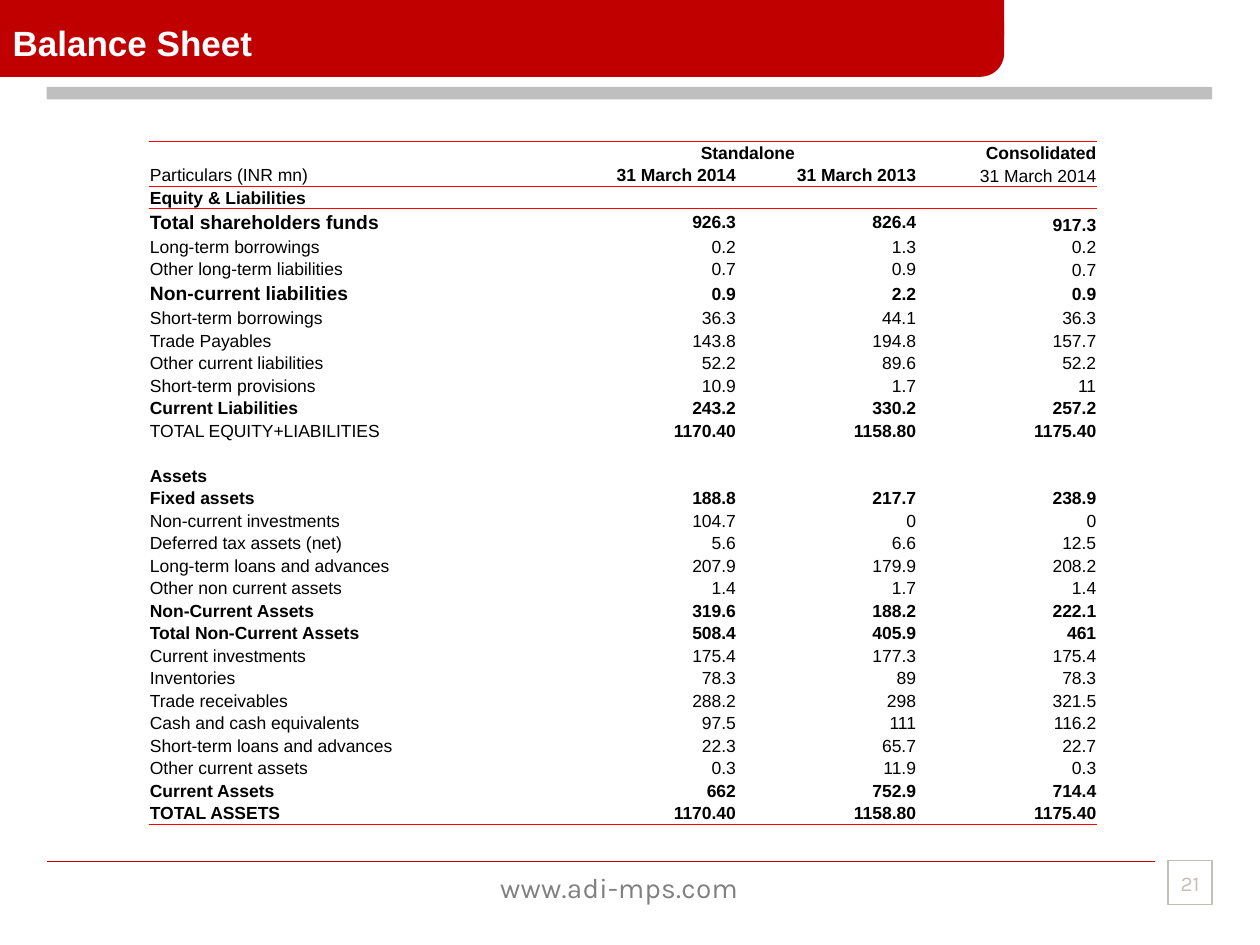
from lxml.etree import SubElement
from pptx import Presentation
from pptx.dml.color import RGBColor
from pptx.enum.shapes import MSO_CONNECTOR, MSO_SHAPE
from pptx.enum.text import MSO_ANCHOR as Anchor, MSO_AUTO_SIZE, PP_ALIGN as Align
from pptx.oxml.ns import qn
from pptx.util import Inches, Pt

RED = RGBColor(0xC0, 0x00, 0x00)
RULE_RED = RGBColor(0xFF, 0x00, 0x00)
GREY = RGBColor(0xBF, 0xBF, 0xBF)
ADDRESS_GREY = RGBColor(0x80, 0x80, 0x80)
NUMBER_GREY = RGBColor(0xC6, 0xBF, 0xB9)
WHITE = RGBColor(0xFF, 0xFF, 0xFF)
BLACK = RGBColor(0x00, 0x00, 0x00)
NO_STYLE = "{2D5ABB26-0587-4C30-8999-92F81FD0307C}"

# Label, standalone 2014, standalone 2013, consolidated 2014
ROWS = [
    ("", "Standalone", "", "Consolidated"),
    ("Particulars (INR mn)", "31 March 2014", "31 March 2013", "31 March 2014"),
    ("Equity & Liabilities", "", "", ""),
    ("Total shareholders funds", "926.3", "826.4", "917.3"),
    ("Long-term borrowings", "0.2", "1.3", "0.2"),
    ("Other long-term liabilities", "0.7", "0.9", "0.7"),
    ("Non-current liabilities", "0.9", "2.2", "0.9"),
    ("Short-term borrowings", "36.3", "44.1", "36.3"),
    ("Trade Payables", "143.8", "194.8", "157.7"),
    ("Other current liabilities", "52.2", "89.6", "52.2"),
    ("Short-term provisions", "10.9", "1.7", "11"),
    ("Current Liabilities", "243.2", "330.2", "257.2"),
    ("TOTAL EQUITY+LIABILITIES", "1170.40", "1158.80", "1175.40"),
    ("", "", "", ""),
    ("Assets", "", "", ""),
    ("Fixed assets", "188.8", "217.7", "238.9"),
    ("Non-current investments", "104.7", "0", "0"),
    ("Deferred tax assets (net)", "5.6", "6.6", "12.5"),
    ("Long-term loans and advances", "207.9", "179.9", "208.2"),
    ("Other non current assets", "1.4", "1.7", "1.4"),
    ("Non-Current Assets", "319.6", "188.2", "222.1"),
    ("Total Non-Current Assets", "508.4", "405.9", "461"),
    ("Current investments", "175.4", "177.3", "175.4"),
    ("Inventories", "78.3", "89", "78.3"),
    ("Trade receivables", "288.2", "298", "321.5"),
    ("Cash and cash equivalents", "97.5", "111", "116.2"),
    ("Short-term loans and advances", "22.3", "65.7", "22.7"),
    ("Other current assets", "0.3", "11.9", "0.3"),
    ("Current Assets", "662", "752.9", "714.4"),
    ("TOTAL ASSETS", "1170.40", "1158.80", "1175.40"),
]
BOLD_ROWS = {0, 2, 3, 6, 11, 14, 15, 20, 21, 28, 29}
BOLD_CELLS = {(1, 2), (1, 3), (12, 2), (12, 3), (12, 4)}
LARGE_LABEL_ROWS = {3, 6}
LOW_LAST_COLUMN_ROWS = range(6)
RULES = {0: ["a:lnT"], 1: ["a:lnB"], 2: ["a:lnT"], len(ROWS) - 1: ["a:lnB"]}
COLUMN_WIDTHS = [2.55, 0.86, 1.26, 1.43, 1.43]
TABLE_HEIGHT, LARGE_ROW_HEIGHT = 5.38, 0.21

# Left, top, width, height, preset, fill
BANDS = [
    (0.37, 0.69, 9.25, 0.1, MSO_SHAPE.RECTANGLE, GREY),
    (0, 0, 2.31, 0.61, MSO_SHAPE.RECTANGLE, RED),
    (5.66, 0, 2.31, 0.3, MSO_SHAPE.RECTANGLE, RED),
    (0, 0, 7.97, 0.61, MSO_SHAPE.ROUNDED_RECTANGLE, RED),
]


def write(frame, text, size, font, color, bold=False, align=Align.LEFT):
    para = frame.paragraphs[0]
    para.alignment = align
    span = para.add_run()
    span.text = text
    span.font.size, span.font.name, span.font.bold = Pt(size), font, bold
    span.font.color.rgb = color
    return span


def add_footer(slide):
    box = slide.shapes.add_shape(MSO_SHAPE.RECTANGLE, Inches(9.27), Inches(6.83),
                                 Inches(0.35), Inches(0.35))
    box.shadow.inherit = False
    box.fill.background()
    box.line.color.rgb, box.line.width = NUMBER_GREY, Pt(0.75)
    frame = box.text_frame
    frame.margin_left = frame.margin_right = frame.margin_top = frame.margin_bottom = 0
    frame.vertical_anchor = Anchor.MIDDLE
    write(frame, "21", 12, "Karla", NUMBER_GREY, align=Align.CENTER)

    address = slide.shapes.add_textbox(Inches(0.61), Inches(6.86), Inches(8.61), Inches(0.37))
    address.text_frame.word_wrap = True
    address.text_frame.auto_size = MSO_AUTO_SIZE.SHAPE_TO_FIT_TEXT
    span = write(address.text_frame, "www.adi-mps.com", 16, "Karla", ADDRESS_GREY,
                 align=Align.CENTER)
    span.font._element.set("spc", "20")

    line = slide.shapes.add_connector(MSO_CONNECTOR.STRAIGHT, Inches(0.37), Inches(6.84),
                                      Inches(9.17), Inches(6.84))
    line.line.color.rgb, line.line.width = RED, Pt(0.75)
    SubElement(line._element.spPr, qn("a:effectLst"))


def add_bands(slide):
    for left, top, width, height, preset, color in BANDS:
        band = slide.shapes.add_shape(preset, Inches(left), Inches(top),
                                      Inches(width), Inches(height))
        band.shadow.inherit = False
        band.fill.solid()
        band.fill.fore_color.rgb = color
        band.line.fill.background()
        if preset == MSO_SHAPE.ROUNDED_RECTANGLE:
            band.adjustments[0] = 0.31


def place_title(slide):
    title = slide.shapes.title
    slide.shapes._spTree.append(title._element)  # in front of the bands
    title.left, title.top, title.width, title.height = 0, 0, Inches(7.21), Inches(0.67)
    title.text_frame.vertical_anchor = Anchor.MIDDLE
    write(title.text_frame, "Balance Sheet", 20, "Arial", WHITE, bold=True)


def format_cell(cell, row):
    cell.margin_left = cell.margin_right = cell.margin_top = Inches(0.01)
    cell.margin_bottom = 0
    properties = cell._tc.get_or_add_tcPr()
    for edge in RULES.get(row, []):
        border = SubElement(properties, qn(edge), w=str(Pt(0.5)))
        fill = SubElement(border, qn("a:solidFill"))
        SubElement(fill, qn("a:srgbClr"), val=str(RULE_RED))
    cell.fill.solid()
    cell.fill.fore_color.rgb = WHITE


def add_balance_table(slide):
    table_frame = slide.shapes.add_table(
        len(ROWS), len(COLUMN_WIDTHS), Inches(1.18), Inches(1.12),
        Inches(sum(COLUMN_WIDTHS)), Inches(TABLE_HEIGHT))
    table = table_frame.table
    table.first_row = table.horz_banding = False
    table._tbl.tblPr.find(qn("a:tableStyleId")).text = NO_STYLE
    for column, width in zip(table.columns, COLUMN_WIDTHS):
        column.width = Inches(width)
    large = len(LARGE_LABEL_ROWS)
    row_height = (TABLE_HEIGHT - large * LARGE_ROW_HEIGHT) / (len(ROWS) - large)

    for row, (label, *values) in enumerate(ROWS):
        is_large = row in LARGE_LABEL_ROWS
        table.rows[row].height = Inches(LARGE_ROW_HEIGHT if is_large else row_height)
        for col, text in enumerate([label, "", *values]):
            cell = table.cell(row, col)
            format_cell(cell, row)
            low = col == 4 and row in LOW_LAST_COLUMN_ROWS
            cell.vertical_anchor = Anchor.BOTTOM if low else Anchor.MIDDLE
            if not text:
                SubElement(cell.text_frame.paragraphs[0]._p, qn("a:endParaRPr"), sz="1000")
                continue
            bold = row in BOLD_ROWS or (row, col) in BOLD_CELLS
            size = 11 if is_large and col == 0 else 10
            align = Align.LEFT if col == 0 else Align.RIGHT
            write(cell.text_frame, text, size, "Arial", BLACK, bold, align)

    table.cell(0, 2).merge(table.cell(0, 3))
    table.cell(0, 2).text_frame.paragraphs[0].alignment = Align.CENTER


def main():
    deck = Presentation()
    deck.slide_width, deck.slide_height = Inches(10), Inches(7.5)
    slide = deck.slides.add_slide(deck.slide_layouts[5])
    add_footer(slide)
    add_bands(slide)
    place_title(slide)
    add_balance_table(slide)
    deck.save("out.pptx")


if __name__ == "__main__":
    main()
